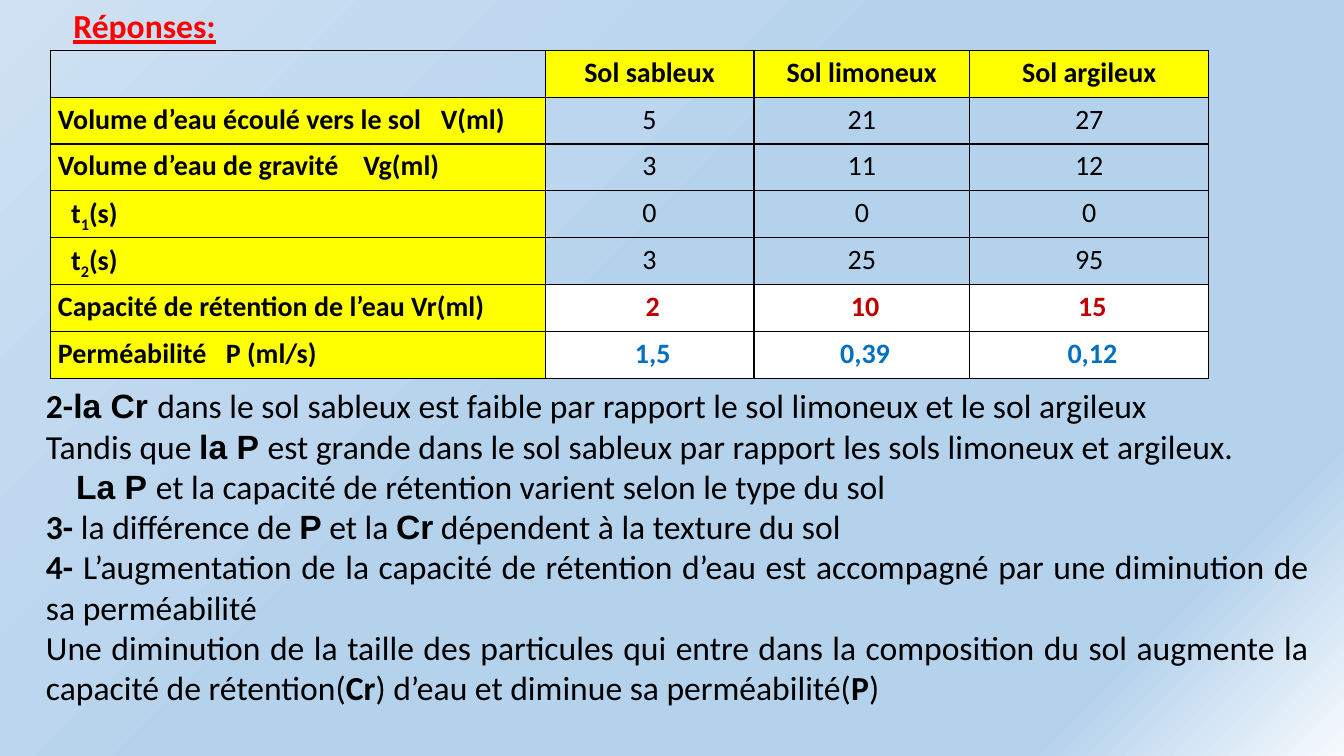
import dataclasses

import lxml.etree
import pptx
import pptx.dml.color
import pptx.enum.text
import pptx.oxml
import pptx.oxml.ns
import pptx.util

Cm = pptx.util.Cm
Pt = pptx.util.Pt
Align = pptx.enum.text.PP_ALIGN
qn = pptx.oxml.ns.qn


@dataclasses.dataclass(frozen=True)
class Theme:
    """Colours, fonts and type sizes of the slide."""
    ink: str = "000000"
    title: str = "FF0000"
    label: str = "FFFF00"
    result: str = "FFFFFF"
    retention: str = "C00000"
    permeability: str = "0070C0"
    backdrop: tuple = ((0, "F7FAFD"), (15, "B5D2EC"), (55, "B5D2EC"),
                       (66, "BBD6EE"), (100, "CEE1F2"))
    font: str = "Calibri"
    symbol_font: str = "Arial"
    text_size: int = 24
    table_size: int = 20
    border: int = 1


@dataclasses.dataclass(frozen=True)
class Span:
    """A piece of text with one look."""
    text: str
    bold: bool = False
    symbol: bool = False
    underline: bool = False
    subscript: bool = False


@dataclasses.dataclass(frozen=True)
class Line:
    """A paragraph made of spans, with its indent and tab stop in centimetres."""
    spans: tuple
    indent: float = 0
    tab: float = 0


def plain(text):
    """Return a regular span."""
    return Span(text)


def bold(text):
    """Return a bold span."""
    return Span(text, bold=True)


def symbol(text):
    """Return a bold span in the symbol font."""
    return Span(text, bold=True, symbol=True)


def time_label(number):
    """Return the row label of a numbered time."""
    return Line((bold("t"), Span(number, bold=True, subscript=True), bold("(s)")), indent=0.33)


class SlideBuilder:
    """Draws styled elements on one page."""

    def __init__(self, page, theme):
        """Keep the page and its theme."""
        self.page = page
        self.theme = theme

    def background(self):
        """Fill the page with a gradient centred on the lower right corner."""
        fill = self.page.background.fill
        fill.gradient()
        gradient = self.page._element.find(".//" + qn("a:gradFill"))
        for child in list(gradient):
            gradient.remove(child)
        stops = lxml.etree.SubElement(gradient, qn("a:gsLst"))
        for position, colour in self.theme.backdrop:
            stop = lxml.etree.SubElement(stops, qn("a:gs"), pos=str(position * 1000))
            lxml.etree.SubElement(stop, qn("a:srgbClr"), val=colour)
        circle = lxml.etree.SubElement(gradient, qn("a:path"), {"path": "circle"})
        lxml.etree.SubElement(circle, qn("a:fillToRect"), l="100000", t="100000")

    def line(self, para, line, size, colour, align):
        """Set one line into a paragraph, run by run."""
        para.alignment = align
        properties = para._p.get_or_add_pPr()
        if line.indent:
            properties.set("marL", str(int(Cm(line.indent))))
            properties.set("indent", "0")
        if line.tab:
            tabs = lxml.etree.SubElement(properties, qn("a:tabLst"))
            lxml.etree.SubElement(tabs, qn("a:tab"), pos=str(int(Cm(line.tab))), algn="l")
        for span in line.spans:
            run = para.add_run()
            run.text = span.text
            run.font.name = self.theme.symbol_font if span.symbol else self.theme.font
            run.font.size = Pt(size)
            run.font.bold = span.bold
            run.font.underline = span.underline
            run.font.color.rgb = pptx.dml.color.RGBColor.from_string(colour)
            if span.subscript:
                run._r.get_or_add_rPr().set("baseline", "-25000")

    def text(self, left, top, width, height, lines, colour, align, wrap=True):
        """Add a text box holding the lines."""
        box = self.page.shapes.add_textbox(Cm(left), Cm(top), Cm(width), Cm(height))
        frame = box.text_frame
        frame.word_wrap = wrap
        frame.auto_size = pptx.enum.text.MSO_AUTO_SIZE.SHAPE_TO_FIT_TEXT
        for index, line in enumerate(lines):
            para = frame.add_paragraph() if index else frame.paragraphs[0]
            self.line(para, line, self.theme.text_size, colour, align)

    def table(self, left, top, widths, row_height, rows):
        """Add a table whose rows hold (line, fill, colour) cells."""
        frame = self.page.shapes.add_table(len(rows), len(widths), Cm(left), Cm(top),
                                           Cm(sum(widths)), Cm(row_height * len(rows)))
        table = frame.table
        table.first_row = table.horz_banding = False
        for column, width in zip(table.columns, widths):
            column.width = Cm(width)
        for row_index, row in enumerate(rows):
            table.rows[row_index].height = Cm(row_height)
            for column_index, content in enumerate(row):
                align = Align.CENTER if column_index else Align.LEFT
                self.cell(table.cell(row_index, column_index), *content, align)

    def cell(self, cell, line, fill, colour, align):
        """Set the text, borders and fill of one table cell."""
        cell.margin_left = cell.margin_right = Cm(0.19)
        cell.margin_top = cell.margin_bottom = 0
        para = cell.text_frame.paragraphs[0]
        self.line(para, line, self.theme.table_size, colour, align)
        para.line_spacing = 1.15
        properties = cell._tc.get_or_add_tcPr()
        for side in ("a:lnL", "a:lnR", "a:lnT", "a:lnB"):
            edge = lxml.etree.SubElement(properties, qn(side), w=str(int(Pt(self.theme.border))))
            solid = lxml.etree.SubElement(edge, qn("a:solidFill"))
            lxml.etree.SubElement(solid, qn("a:srgbClr"), val=self.theme.ink)
        if fill:
            cell.fill.solid()
            cell.fill.fore_color.rgb = pptx.dml.color.RGBColor.from_string(fill)
        else:
            cell.fill.background()


def soil_rows(theme):
    """Return the header row and the measured and computed rows."""
    soils = ("Sol sableux", "Sol limoneux", "Sol argileux")
    measures = (
        (Line((bold("Volume d’eau écoulé vers le sol\tV(ml)"),), tab=9.65), ("5", "21", "27")),
        (Line((bold("Volume d’eau de gravité\tVg(ml)"),), tab=7.7), ("3", "11", "12")),
        (time_label("1"), ("0", "0", "0")),
        (time_label("2"), ("3", "25", "95")),
    )
    results = (
        (Line((bold("Capacité de rétention de l’eau Vr(ml)"),)), ("2", "10", "15"),
         theme.retention),
        (Line((bold("Perméabilité\tP (ml/s)"),), tab=4.23), ("1,5", "0,39", "0,12"),
         theme.permeability),
    )
    rows = [[(Line(()), None, theme.ink)]
            + [(Line((bold(soil),)), theme.label, theme.ink) for soil in soils]]
    for label, values in measures:
        rows.append([(label, theme.label, theme.ink)]
                    + [(Line((plain(value),)), None, theme.ink) for value in values])
    for label, values, colour in results:
        rows.append([(label, theme.label, theme.ink)]
                    + [(Line((bold(value),), indent=0.16), theme.result, colour)
                       for value in values])
    return rows


ANSWERS = (
    Line((bold("2-"), symbol("la Cr "),
          plain("dans le sol sableux est faible par rapport le sol limoneux et le sol argileux"))),
    Line((plain("Tandis que "), symbol("la P "),
          plain("est grande dans le sol sableux par rapport les sols limoneux et argileux."))),
    Line((symbol("La P "), plain("et la capacité de rétention varient selon le type du sol")),
         indent=0.76),
    Line((bold("3- "), plain("la différence de "), symbol("P"), plain(" et la "), symbol("Cr"),
          plain(" dépendent à la texture du sol"))),
    Line((bold("4- "), plain("L’augmentation de la capacité de rétention d’eau est accompagné "
                             "par une diminution de sa perméabilité"))),
    Line((plain("Une diminution de la taille des particules qui entre dans la composition du sol "
                "augmente la capacité de rétention("), bold("Cr"),
          plain(") d’eau et diminue sa perméabilité("), bold("P"), plain(")"))),
)


def main():
    """Build the slide and save it."""
    deck = pptx.Presentation()
    deck.slide_width, deck.slide_height = Cm(33.87), Cm(19.05)
    theme = Theme()
    builder = SlideBuilder(deck.slides.add_slide(deck.slide_layouts[6]), theme)
    builder.background()
    builder.table(1.27, 1.27, (12.47, 5.26, 5.44, 6.02), 1.18, soil_rows(theme))
    heading = Line((Span("Réponses:", bold=True, underline=True),))
    builder.text(1.6, 0, 4.14, 1.27, (heading,), theme.title, Align.LEFT, wrap=False)
    builder.text(0.91, 9.58, 32.33, 9.5, ANSWERS, theme.ink, Align.JUSTIFY)
    deck.save("out.pptx")


if __name__ == "__main__":
    main()
